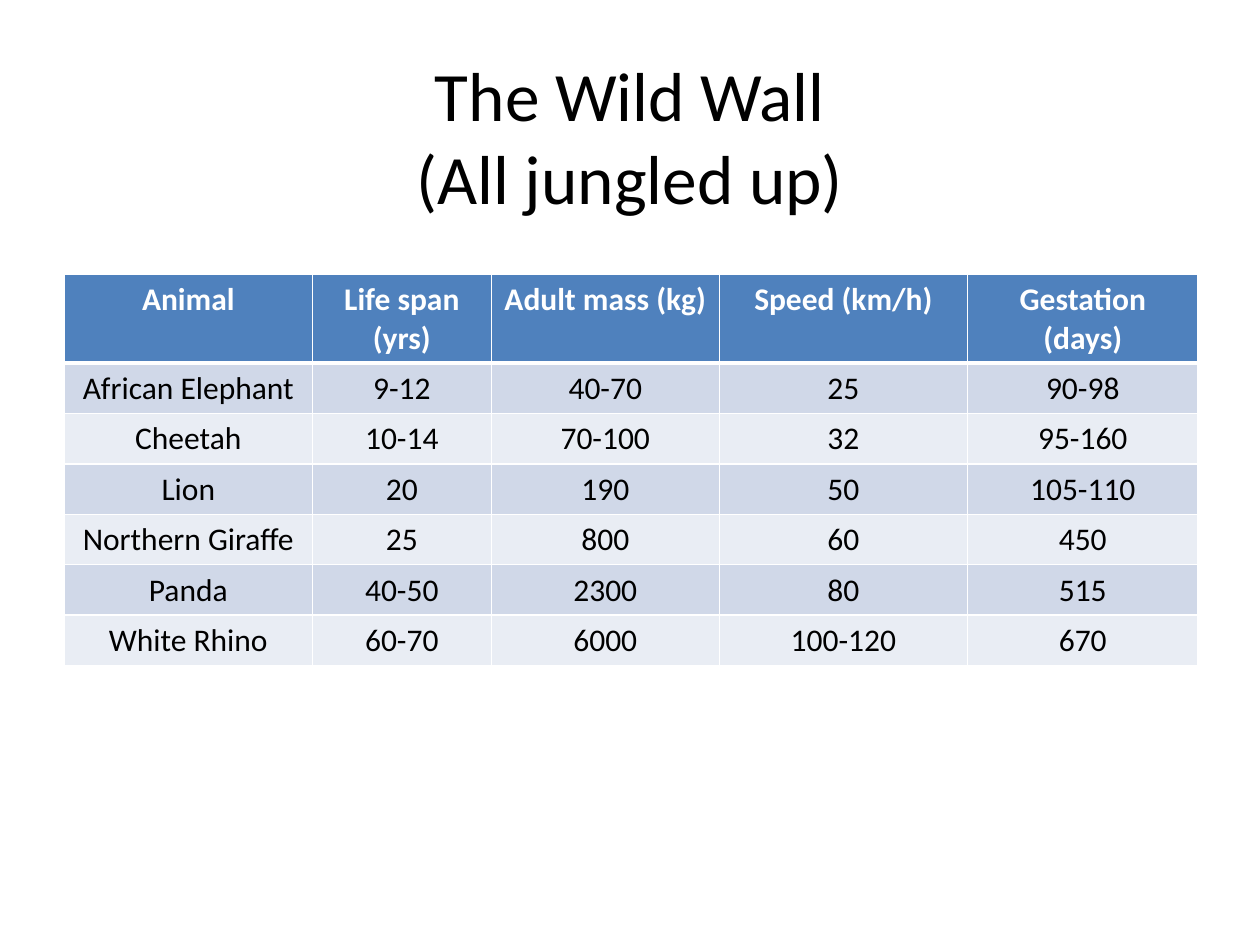
from dataclasses import dataclass

from lxml import etree
from pptx import Presentation
from pptx.dml.color import RGBColor
from pptx.enum.text import MSO_ANCHOR, PP_ALIGN
from pptx.oxml.ns import qn
from pptx.util import Inches, Pt

CENTER = PP_ALIGN.CENTER
MIDDLE = MSO_ANCHOR.MIDDLE
WHITE, BLACK, BLUE = "FFFFFF", "000000", "4F81BD"
BANDS = ("D0D8E8", "E9EDF4")
WIDTHS = (1.97, 1.42, 1.81, 1.97, 1.83)
HEAD_H, ROW_H = 0.7, 0.4
TITLE = ("The Wild Wall", "(All jungled up)")
HEADS = ("Animal", "Life span (yrs)", "Adult mass (kg)", "Speed (km/h)", "Gestation (days)")


@dataclass
class Animal:
    name: str
    span: str
    mass: str
    speed: str
    term: str

    def cells(self) -> tuple:
        return self.name, self.span, self.mass, self.speed, self.term


@dataclass
class Look:
    fill: str
    ink: str
    bold: bool
    top: int
    base: int


ANIMALS = (
    Animal("African Elephant", "9-12", "40-70", "25", "90-98"),
    Animal("Cheetah", "10-14", "70-100", "32", "95-160"),
    Animal("Lion", "20", "190", "50", "105-110"),
    Animal("Northern Giraffe", "25", "800", "60", "450"),
    Animal("Panda", "40-50", "2300", "80", "515"),
    Animal("White Rhino", "60-70", "6000", "100-120", "670"),
)


def color(code: str) -> RGBColor:
    return RGBColor.from_string(code)


def put(target, values: dict) -> None:
    for name, value in values.items():
        setattr(target, name, value)


def write(para, lines: tuple, size: float, ink: str, bold: bool) -> None:
    para.alignment = CENTER
    for i, text in enumerate(lines):
        if i:
            para.add_line_break()
        run = para.add_run()
        run.text = text
        put(run.font, {"name": "Calibri", "size": Pt(size), "bold": bold})
        run.font.color.rgb = color(ink)


def edge(cell, side: str, width: int) -> None:
    props = cell._tc.get_or_add_tcPr()
    line = etree.SubElement(props, qn(f"a:ln{side}"), w=str(Pt(width)))
    fill = etree.SubElement(line, qn("a:solidFill"))
    etree.SubElement(fill, qn("a:srgbClr"), val=WHITE)


def draw_row(row, texts: tuple, look: Look) -> None:
    for cell, text in zip(row.cells, texts):
        for side, width in zip("LRTB", (1, 1, look.top, look.base)):
            edge(cell, side, width)
        cell.fill.solid()
        cell.fill.fore_color.rgb = color(look.fill)
        write(cell.text_frame.paragraphs[0], (text,), 18, look.ink, look.bold)


def draw_title(slide) -> None:
    box = slide.shapes.add_textbox(Inches(0.5), Inches(0.52), Inches(9), Inches(1.5))
    frame = box.text_frame
    put(frame, {
        "word_wrap": True,
        "vertical_anchor": MIDDLE,
        "margin_top": Inches(0.05),
        "margin_bottom": Inches(0.44),
    })
    write(frame.paragraphs[0], TITLE, 39.6, BLACK, False)


def draw_table(slide) -> None:
    count = len(ANIMALS)
    shape = slide.shapes.add_table(
        count + 1, len(HEADS), Inches(0.51), Inches(2.18),
        Inches(sum(WIDTHS)), Inches(HEAD_H + count * ROW_H))
    table = shape.table
    for col, width in zip(table.columns, WIDTHS):
        col.width = Inches(width)
    for i, row in enumerate(table.rows):
        row.height = Inches(ROW_H if i else HEAD_H)
    draw_row(table.rows[0], HEADS, Look(BLUE, WHITE, True, 1, 3))
    for i, animal in enumerate(ANIMALS):
        look = Look(BANDS[i % 2], BLACK, False, 1 if i else 3, 1)
        draw_row(table.rows[i + 1], animal.cells(), look)


def main() -> None:
    deck = Presentation()
    put(deck, {"slide_width": Inches(10), "slide_height": Inches(7.5)})
    slide = deck.slides.add_slide(deck.slide_layouts[6])
    draw_title(slide)
    draw_table(slide)
    deck.save("out.pptx")


if __name__ == "__main__":
    main()
